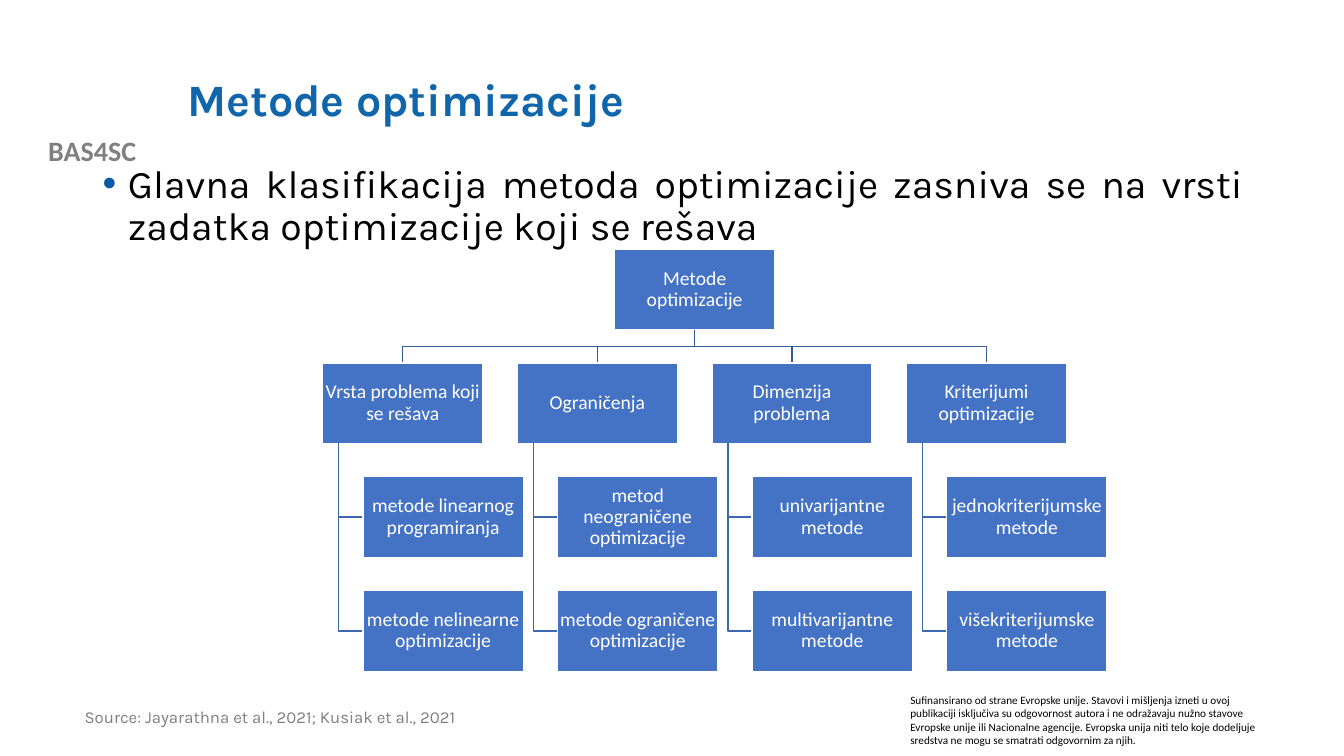
from dataclasses import dataclass

from lxml.etree import SubElement
from pptx import Presentation
from pptx.dml.color import RGBColor
from pptx.enum.shapes import MSO_SHAPE
from pptx.enum.text import MSO_ANCHOR as Anchor, PP_ALIGN as Align
from pptx.oxml.ns import qn
from pptx.util import Inches, Pt


@dataclass(frozen=True)
class Theme:
    heading_font: str = "Karla"
    label_font: str = "Calibri"
    title: str = "1065AB"
    bullet: str = "015BA6"
    text: str = "000000"
    source: str = "7F7F7F"
    project: str = "808080"
    box: str = "4472C4"
    white: str = "FFFFFF"
    trunk: str = "365B9D"
    branch: str = "3E67B2"
    title_size: int = 32
    body_size: int = 28
    project_size: int = 20
    box_size: int = 14
    source_size: int = 12
    notice_size: int = 8


THEME = Theme()

# Chart geometry, in inches
BOX_WIDTH, BOX_HEIGHT = 1.59, 0.8
LEFT, TOP = 3.2, 2.47
COLUMN_STEP, ROW_STEP = 1.93, 1.13
LEAF_INDENT, STEM_INDENT = 0.4, 0.16

ROOT = "Metode optimizacije"
BRANCHES = [
    ("Vrsta problema koji se rešava",
     ["metode linearnog programiranja", "metode nelinearne optimizacije"]),
    ("Ograničenja",
     ["metod neograničene optimizacije", "metode ograničene optimizacije"]),
    ("Dimenzija problema",
     ["univarijantne metode", "multivarijantne metode"]),
    ("Kriterijumi optimizacije",
     ["jednokriterijumske metode", "višekriterijumske metode"]),
]
NOTICE = (
    "Sufinansirano od strane Evropske unije. Stavovi i mišljenja izneti u ovoj "
    "publikaciji isključiva su odgovornost autora i ne odražavaju nužno stavove "
    "Evropske unije ili Nacionalne agencije. Evropska unija niti telo koje "
    "dodeljuje sredstva ne mogu se smatrati odgovornim za njih."
)


def rgb(value):
    return RGBColor.from_string(value)


def write(shape, text, font, size, color, bold=False, align=Align.LEFT,
          line_spacing=1.0, bullet=None):
    """Fill a shape with one formatted paragraph."""
    frame = shape.text_frame
    frame.word_wrap = True
    frame.text = text
    paragraph = frame.paragraphs[0]
    paragraph.alignment = align
    paragraph.line_spacing = line_spacing
    if bullet:
        add_bullet(paragraph, bullet)
    paragraph.font.name = font
    paragraph.font.size = Pt(size)
    paragraph.font.bold = bold
    paragraph.font.color.rgb = rgb(color)


def add_bullet(paragraph, color):
    properties = paragraph._p.get_or_add_pPr()
    properties.set("marL", str(Inches(0.25)))
    properties.set("indent", str(Inches(-0.25)))
    bullet_color = SubElement(properties, qn("a:buClr"))
    SubElement(bullet_color, qn("a:srgbClr"), val=color)
    SubElement(properties, qn("a:buFont"), typeface="Arial")
    SubElement(properties, qn("a:buChar"), char="•")


def add_text(slide, left, top, width, height, text, *style, **options):
    box = slide.shapes.add_textbox(
        Inches(left), Inches(top), Inches(width), Inches(height))
    write(box, text, *style, **options)


def add_title(slide, text):
    title = slide.shapes.title
    title.left, title.top = Inches(1.76), Inches(0.4)
    title.width, title.height = Inches(10.66), Inches(1.22)
    title.text_frame.vertical_anchor = Anchor.MIDDLE
    write(title, text, THEME.heading_font, THEME.title_size, THEME.title,
          bold=True, line_spacing=0.9)


def add_box(slide, left, top, text):
    box = slide.shapes.add_shape(
        MSO_SHAPE.RECTANGLE, Inches(left), Inches(top),
        Inches(BOX_WIDTH), Inches(BOX_HEIGHT))
    box.shadow.inherit = False
    box.fill.solid()
    box.fill.fore_color.rgb = rgb(THEME.box)
    box.line.color.rgb = rgb(THEME.white)
    box.line.width = Pt(1)
    frame = box.text_frame
    frame.margin_left = frame.margin_right = Inches(0.01)
    frame.margin_top = frame.margin_bottom = Inches(0.01)
    frame.vertical_anchor = Anchor.MIDDLE
    write(box, text, THEME.label_font, THEME.box_size, THEME.white,
          align=Align.CENTER, line_spacing=0.9)


def add_elbow(slide, color, *points):
    """Draw an open bent line through points given in inches."""
    start, *rest = [(Inches(x), Inches(y)) for x, y in points]
    builder = slide.shapes.build_freeform(*start)
    builder.add_line_segments(rest, close=False)
    elbow = builder.convert_to_shape()
    elbow.shadow.inherit = False
    elbow.fill.background()
    elbow.line.color.rgb = rgb(color)
    elbow.line.width = Pt(1)


def add_hierarchy(slide):
    root_left = LEFT + COLUMN_STEP * (len(BRANCHES) - 1) / 2
    root_middle = root_left + BOX_WIDTH / 2
    root_bottom = TOP + BOX_HEIGHT
    branch_top = TOP + ROW_STEP
    bend = (root_bottom + branch_top) / 2
    add_box(slide, root_left, TOP, ROOT)

    for column, (branch, leaves) in enumerate(BRANCHES):
        left = LEFT + column * COLUMN_STEP
        middle = left + BOX_WIDTH / 2
        add_elbow(slide, THEME.trunk, (root_middle, root_bottom),
                  (root_middle, bend), (middle, bend), (middle, branch_top))
        add_box(slide, left, branch_top, branch)

        stem, leaf_left = left + STEM_INDENT, left + LEAF_INDENT
        for row, leaf in enumerate(leaves, start=1):
            leaf_top = branch_top + row * ROW_STEP
            leaf_middle = leaf_top + BOX_HEIGHT / 2
            add_elbow(slide, THEME.branch, (stem, branch_top + BOX_HEIGHT),
                      (stem, leaf_middle), (leaf_left, leaf_middle))
            add_box(slide, leaf_left, leaf_top, leaf)


def main():
    presentation = Presentation()
    presentation.slide_width = Inches(13.33)
    presentation.slide_height = Inches(7.5)
    slide = presentation.slides.add_slide(presentation.slide_layouts[5])

    # Project label and funding notice
    add_text(slide, 0, 1.28, 1.83, 0.44, "BAS4SC", THEME.label_font,
             THEME.project_size, THEME.project, bold=True, align=Align.CENTER)
    add_text(slide, 8.93, 6.83, 3.67, 0.64, NOTICE, THEME.label_font,
             THEME.notice_size, THEME.text)

    # Title, statement and source
    add_title(slide, "Metode optimizacije")
    add_text(slide, 0.92, 1.58, 11.5, 1.22,
             "Glavna klasifikacija metoda optimizacije zasniva se na vrsti "
             "zadatka optimizacije koji se rešava",
             THEME.heading_font, THEME.body_size, THEME.text,
             align=Align.JUSTIFY, line_spacing=0.9, bullet=THEME.bullet)
    add_text(slide, 0.74, 6.98, 5.01, 0.52,
             "Source: Jayarathna et al., 2021; Kusiak et al., 2021",
             THEME.heading_font, THEME.source_size, THEME.source,
             line_spacing=0.9)

    # Classification tree
    add_hierarchy(slide)

    presentation.save("out.pptx")


if __name__ == "__main__":
    main()
